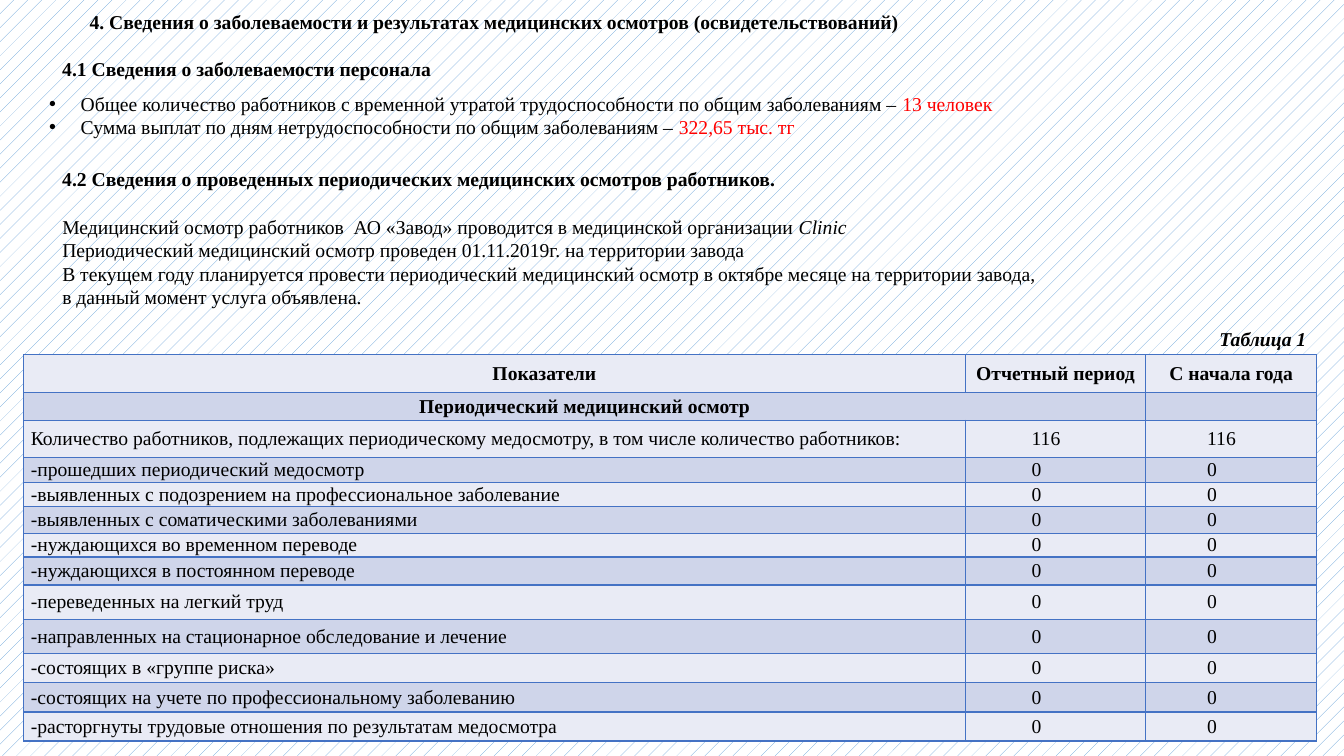
import pptx
import pptx.dml.color
import pptx.enum.dml
import pptx.enum.text
import pptx.oxml
import pptx.oxml.ns
import pptx.util

Pt = pptx.util.Pt
RGBColor = pptx.dml.color.RGBColor
ALIGN = pptx.enum.text.PP_ALIGN

BLACK = RGBColor(0x00, 0x00, 0x00)
RED = RGBColor(0xFF, 0x00, 0x00)
WHITE = RGBColor(0xFF, 0xFF, 0xFF)
PATTERN_BLUE = RGBColor(0x5B, 0x9B, 0xD5)
BORDER_BLUE = RGBColor(0x44, 0x72, 0xC4)
LIGHT_BAND = RGBColor(0xE9, 0xEB, 0xF5)
DARK_BAND = RGBColor(0xCF, 0xD5, 0xEA)

# Each text: (left, top, width, height), paragraphs of (text, ending), options.
# The ending of a paragraph is the part set apart by colour or italics.
SECTION = ((56.9, 0.7, 650.9, 26.6), [
    ("4. Сведения о заболеваемости и результатах медицинских осмотров (освидетельствований)", ""),
], {"bold": True, "spacing": 1.15})
DETAILS = [
    ((37.4, 115.9, 902.9, 24.5), [
        ("4.2 Сведения о проведенных периодических медицинских осмотров работников.", ""),
    ], {"bold": True}),
    ((37.4, 149.8, 720.7, 92.2), [
        ("Медицинский осмотр работников  АО «Завод» проводится в медицинской организации ", "Clinic"),
        ("Периодический медицинский осмотр проведен 01.11.2019г. на территории завода", ""),
        ("В текущем году планируется провести периодический медицинский осмотр "
         "в октябре месяце на территории завода,", ""),
        ("в данный момент услуга объявлена.", ""),
    ], {"wrap": False}),
    ((864, 229.7, 77, 24.5), [("Таблица 1", "")],
     {"bold": True, "italic": True, "wrap": False}),
    ((37.4, 37.4, 902.9, 24.5), [("4.1 Сведения о заболеваемости персонала", "")],
     {"bold": True}),
    ((28.1, 61.9, 694.1, 41), [
        ("Общее количество работников с временной утратой трудоспособности "
         "по общим заболеваниям – ", "13 человек"),
        ("Сумма выплат по дням нетрудоспособности по общим заболеваниям – ", "322,65 тыс. тг"),
    ], {"wrap": False, "bulleted": True}),
]

HEADINGS = ("Показатели", "Отчетный период", "С начала года")
GROUP = "Периодический медицинский осмотр"
INDICATORS = [
    ("Количество работников, подлежащих периодическому медосмотру, "
     "в том числе количество работников:", "116", "116"),
    ("-прошедших периодический медосмотр", "0", "0"),
    ("-выявленных с подозрением на профессиональное заболевание", "0", "0"),
    ("-выявленных с соматическими заболеваниями", "0", "0"),
    ("-нуждающихся во временном переводе", "0", "0"),
    ("-нуждающихся в постоянном переводе", "0", "0"),
    ("-переведенных на легкий труд", "0", "0"),
    ("-направленных на стационарное обследование и лечение", "0", "0"),
    ("-состоящих в «группе риска»", "0", "0"),
    ("-состоящих на учете по профессиональному заболеванию", "0", "0"),
    ("-расторгнуты трудовые отношения по результатам медосмотра", "0", "0"),
]
TABLE_LEFT, TABLE_TOP = 17, 253.4
COLUMN_WIDTHS = (672.5, 128.9, 122.2)
ROW_HEIGHTS = (27.2, 19.6, 26.8, 17.9, 16.1, 19.2, 17, 20, 24.6, 24.6, 20.8, 20.8, 20.8)
VALUE_INDENTS = (None, 6.4, 2.9)


def style(paragraph, bold=False, italic=False):
    font = paragraph.font
    font.name, font.size = "Times New Roman", Pt(14)
    font.bold, font.italic = bold, italic
    font.color.rgb = BLACK


def indent(paragraph, margin, first_line):
    properties = paragraph._p.get_or_add_pPr()
    properties.set("marL", str(Pt(margin)))
    properties.set("indent", str(Pt(first_line)))
    return properties


def add_bullet(paragraph):
    properties = indent(paragraph, 22.5, -22.5)
    namespace = pptx.oxml.ns.nsdecls("a")
    bullet = pptx.oxml.parse_xml(f'<a:buChar {namespace} char="•"/>')
    bullet_font = pptx.oxml.parse_xml(f'<a:buFont {namespace} typeface="Arial"/>')
    properties.insert(0, bullet)
    properties.insert(0, bullet_font)


def add_text(slide, box, lines, bold=False, italic=False, spacing=None,
             wrap=True, bulleted=False):
    frame = slide.shapes.add_textbox(*map(Pt, box)).text_frame
    frame.word_wrap = wrap
    frame.auto_size = pptx.enum.text.MSO_AUTO_SIZE.SHAPE_TO_FIT_TEXT
    for number, (text, ending) in enumerate(lines):
        paragraph = frame.add_paragraph() if number else frame.paragraphs[0]
        style(paragraph, bold, italic)
        if spacing:
            paragraph.line_spacing = spacing
        if bulleted:
            add_bullet(paragraph)
        paragraph.add_run().text = text
        if ending:
            run = paragraph.add_run()
            run.text = ending
            if bulleted:
                run.font.color.rgb = RED
            else:
                run.font.italic = True


def add_borders(cell):
    properties = cell._tc.get_or_add_tcPr()
    for side in ("lnL", "lnR", "lnT", "lnB"):
        properties.append(pptx.oxml.parse_xml(
            f'<a:{side} {pptx.oxml.ns.nsdecls("a")} w="{Pt(1)}"><a:solidFill>'
            f'<a:srgbClr val="{BORDER_BLUE}"/></a:solidFill></a:{side}>'))


def add_indicator_table(slide):
    rows = [HEADINGS, (GROUP, "", ""), *INDICATORS]
    table = slide.shapes.add_table(
        len(rows), len(HEADINGS), Pt(TABLE_LEFT), Pt(TABLE_TOP),
        Pt(sum(COLUMN_WIDTHS)), Pt(sum(ROW_HEIGHTS))).table
    table.first_row = table.horz_banding = False
    for column, width in zip(table.columns, COLUMN_WIDTHS):
        column.width = Pt(width)
    for row_number, (row, height) in enumerate(zip(rows, ROW_HEIGHTS)):
        table.rows[row_number].height = Pt(height)
        is_heading = row_number < 2
        for column_number, text in enumerate(row):
            cell = table.cell(row_number, column_number)
            cell.margin_left = cell.margin_right = Pt(5)
            cell.margin_top = cell.margin_bottom = 0
            cell.vertical_anchor = pptx.enum.text.MSO_ANCHOR.MIDDLE
            add_borders(cell)
            cell.fill.solid()
            cell.fill.fore_color.rgb = DARK_BAND if row_number % 2 else LIGHT_BAND
            paragraph = cell.text_frame.paragraphs[0]
            style(paragraph, bold=is_heading)
            if text:
                paragraph.add_run().text = text
            if is_heading:
                paragraph.alignment = ALIGN.CENTER
            elif column_number:
                indent(paragraph, 36, VALUE_INDENTS[column_number])
    indent(table.cell(0, 0).text_frame.paragraphs[0], 36, 35.3)
    table.cell(1, 0).merge(table.cell(1, 1))


def main():
    presentation = pptx.Presentation()
    presentation.slide_width, presentation.slide_height = Pt(960), Pt(540)
    slide = presentation.slides.add_slide(presentation.slide_layouts[6])
    background = slide.background.fill
    background.patterned()
    background.pattern = pptx.enum.dml.MSO_PATTERN.PERCENT_5
    background.fore_color.rgb = PATTERN_BLUE
    background.back_color.rgb = WHITE
    box, lines, options = SECTION
    add_text(slide, box, lines, **options)
    add_indicator_table(slide)
    for box, lines, options in DETAILS:
        add_text(slide, box, lines, **options)
    presentation.save("out.pptx")


if __name__ == "__main__":
    main()
